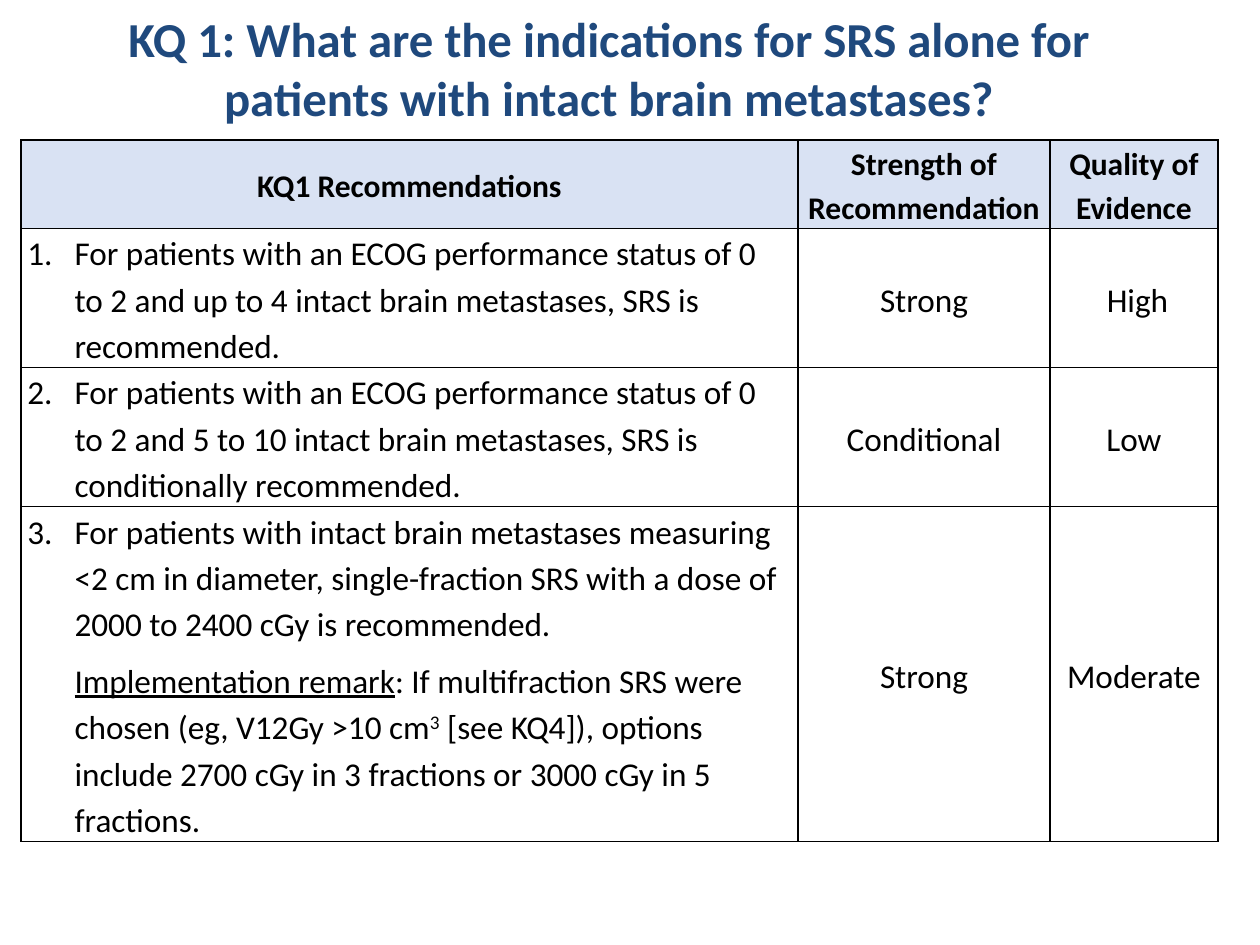
import pptx
import pptx.util
from lxml import etree
from pptx.dml.color import RGBColor
from pptx.enum.text import MSO_ANCHOR, PP_ALIGN
from pptx.oxml.ns import qn

Pt = pptx.util.Pt
FONT = "Calibri"
COLORS = {"title": "1F497D", "text": "000000", "border": "000000", "header": "D9E2F3"}
COLUMNS = [444, 144, 96]
ROWS = [50.5, 79.5, 79.5, 191.5]
INDENT = 27
HEADERS = ["KQ1 Recommendations", "Strength of Recommendation", "Quality of Evidence"]
RECOMMENDATIONS = [
    ("For patients with an ECOG performance status of 0 to 2 and up to 4 intact brain "
     "metastases, SRS is recommended.", "Strong", "High"),
    ("For patients with an ECOG performance status of 0 to 2 and 5 to 10 intact brain "
     "metastases, SRS is conditionally recommended.", "Conditional", "Low"),
    ("For patients with intact brain metastases measuring <2 cm in diameter, "
     "single-fraction SRS with a dose of 2000 to 2400 cGy is recommended.",
     "Strong", "Moderate"),
]


def rgb(name):
    return RGBColor.from_string(COLORS[name])


def set_font(p, size, color="text", bold=False):
    p.font.name = FONT
    p.font.size = Pt(size)
    p.font.bold = bold
    p.font.color.rgb = rgb(color)


def set_indent(p, left, first=0):
    pPr = p._p.get_or_add_pPr()
    pPr.set("marL", str(Pt(left)))
    pPr.set("indent", str(Pt(first)))


def add_number(p, start):
    """Number the paragraph with a hanging indent."""
    set_indent(p, INDENT, -INDENT)
    bullet = etree.SubElement(p._p.get_or_add_pPr(), qn("a:buAutoNum"))
    bullet.set("type", "arabicPeriod")
    bullet.set("startAt", str(start))


def add_title(s, text):
    tf = s.shapes.add_textbox(Pt(24), Pt(1.5), Pt(648), Pt(78)).text_frame
    tf.word_wrap = True
    p = tf.paragraphs[0]
    p.text = text
    p.alignment = PP_ALIGN.CENTER
    set_font(p, 27.9, "title", bold=True)


def add_borders(cell):
    tcPr = cell._tc.get_or_add_tcPr()
    for side in ("lnL", "lnR", "lnT", "lnB"):
        ln = etree.SubElement(tcPr, qn(f"a:{side}"), w=str(Pt(1)))
        fill = etree.SubElement(ln, qn("a:solidFill"))
        etree.SubElement(fill, qn("a:srgbClr"), val=COLORS["border"])


def format_cell(cell, header=False):
    cell.margin_left = cell.margin_right = Pt(3.6)
    cell.margin_top = cell.margin_bottom = 0
    add_borders(cell)
    if header:
        cell.fill.solid()
        cell.fill.fore_color.rgb = rgb("header")
    else:
        cell.fill.background()


def write_centered(cell, text, size, bold=False):
    cell.vertical_anchor = MSO_ANCHOR.MIDDLE
    p = cell.text_frame.paragraphs[0]
    p.text = text
    p.alignment = PP_ALIGN.CENTER
    p.line_spacing = 1.15
    set_font(p, size, bold=bold)


def write_recommendation(cell, number, text):
    p = cell.text_frame.paragraphs[0]
    p.text = text
    p.line_spacing = 1.15
    add_number(p, number)
    set_font(p, 19)


def add_remark(cell):
    tf = cell.text_frame
    tf.paragraphs[0].space_after = Pt(6)
    p = tf.add_paragraph()
    p.line_spacing = 1.15
    set_indent(p, INDENT)
    set_font(p, 19)
    parts = ["Implementation remark", ": If multifraction SRS were chosen (eg, V12Gy >10 cm",
             "3", " [see KQ4]), options include 2700 cGy in 3 fractions or 3000 cGy in 5 fractions."]
    for text in parts:
        p.add_run().text = text
    label, _, exponent, _ = p.runs
    label.font.underline = True
    exponent.font._element.set("baseline", "30000")


def add_recommendation_table(s):
    table = s.shapes.add_table(len(ROWS), len(COLUMNS), Pt(12), Pt(80),
                               Pt(sum(COLUMNS)), Pt(sum(ROWS))).table
    table.first_row = table.horz_banding = False
    for column, width in zip(table.columns, COLUMNS):
        column.width = Pt(width)
    for i, height in enumerate(ROWS):
        table.rows[i].height = Pt(height)
        for cell in table.rows[i].cells:
            format_cell(cell, header=i == 0)
    for col, text in enumerate(HEADERS):
        write_centered(table.cell(0, col), text, 18, bold=True)
    for row, (text, strength, quality) in enumerate(RECOMMENDATIONS, 1):
        write_recommendation(table.cell(row, 0), row, text)
        write_centered(table.cell(row, 1), strength, 19)
        write_centered(table.cell(row, 2), quality, 19)
    set_indent(table.cell(1, 2).text_frame.paragraphs[0], 4)
    add_remark(table.cell(3, 0))


def main():
    prs = pptx.Presentation()
    prs.slide_width, prs.slide_height = Pt(720), Pt(540)
    s = prs.slides.add_slide(prs.slide_layouts[6])
    add_title(s, "KQ 1: What are the indications for SRS alone for patients with "
                 "intact brain metastases?")
    add_recommendation_table(s)
    prs.save("out.pptx")


if __name__ == "__main__":
    main()
